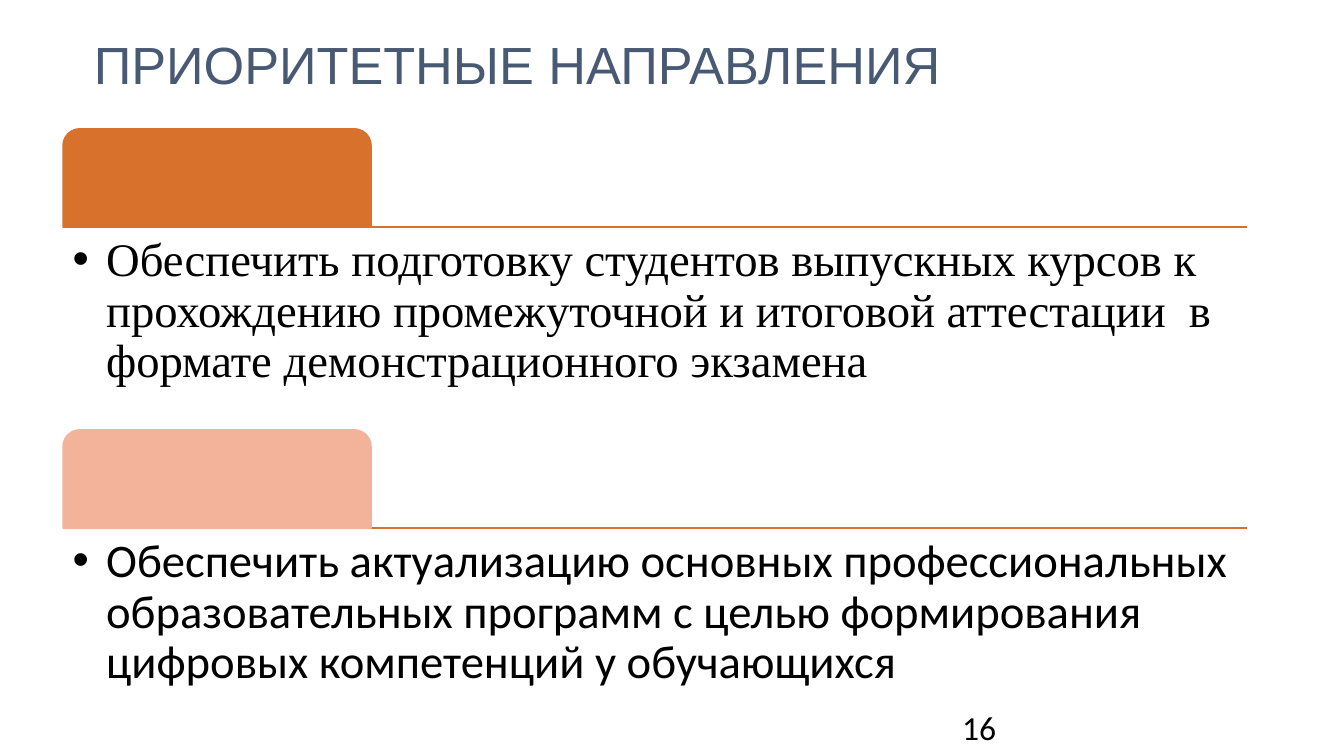
from lxml import etree
from pptx import Presentation
from pptx.dml.color import RGBColor
from pptx.enum import shapes, text
from pptx.oxml.ns import qn
from pptx.util import Inches, Pt

ORANGE = RGBColor(0xD7, 0x71, 0x2C)
PEACH = RGBColor(0xF3, 0xB3, 0x9B)
SLATE = RGBColor(0x48, 0x5A, 0x73)
BLACK = RGBColor(0, 0, 0)

LEFT, WIDTH = 0.47, 8.81
TAB_WIDTH, TAB_HEIGHT = 2.29, 0.73
FIRST_TOP, STEP = 0.96, 2.24

# Widescreen 16:9 slide
deck = Presentation()
deck.slide_width = Inches(10)
deck.slide_height = Inches(10 * 9 / 16)
slide = deck.slides.add_slide(deck.slide_layouts[6])


def add_text(words, box, font, inset=(0.1, 0.05), bullet=False):
    """Add a one-paragraph text box, bulleted on request."""
    frame = slide.shapes.add_textbox(*map(Inches, box)).text_frame
    side, edge = map(Inches, inset)
    frame_format = {
        "word_wrap": True,
        "vertical_anchor": text.MSO_ANCHOR.TOP,
        "margin_left": side, "margin_right": side,
        "margin_top": edge, "margin_bottom": edge,
    }
    for name, value in frame_format.items():
        setattr(frame, name, value)
    paragraph = frame.paragraphs[0]
    if bullet:
        paragraph.line_spacing = 0.9
        indent = Inches(0.25)
        properties = paragraph._p.get_or_add_pPr()
        properties.set("marL", str(indent))
        properties.set("indent", str(-indent))
        etree.SubElement(properties, qn("a:buFont")).set("typeface", "Arial")
        etree.SubElement(properties, qn("a:buChar")).set("char", "•")
    run = paragraph.add_run()
    run.text = words
    size, typeface, colour = font
    for name, value in {"size": Pt(size), "name": typeface}.items():
        setattr(run.font, name, value)
    run.font.color.rgb = colour


# Page number and title
add_text("16", (7.06, 5.21, 2.25, 0.3), (18, "Calibri", BLACK))
add_text("ПРИОРИТЕТНЫЕ НАПРАВЛЕНИЯ", (0.6, 0.19, 7.25, 0.57), (28, "Arial", SLATE))

# Priorities: a rule, a tab standing on it and the text below
priorities = [
    (ORANGE, "Times New Roman",
     "Обеспечить подготовку студентов выпускных курсов к прохождению "
     "промежуточной и итоговой аттестации  в формате демонстрационного экзамена"),
    (PEACH, "Calibri",
     "Обеспечить актуализацию основных профессиональных образовательных "
     "программ с целью формирования цифровых компетенций у обучающихся"),
]
for index, (tab_colour, typeface, priority) in enumerate(priorities):
    top = FIRST_TOP + index * STEP
    base = top + TAB_HEIGHT

    rule = slide.shapes.add_connector(
        shapes.MSO_CONNECTOR.STRAIGHT,
        Inches(LEFT), Inches(base), Inches(LEFT + WIDTH), Inches(base))
    rule.line.color.rgb = ORANGE
    rule.line.width = Pt(1)
    etree.SubElement(rule._element.spPr, qn("a:effectLst"))

    tab = slide.shapes.add_shape(
        shapes.MSO_SHAPE.ROUND_2_SAME_RECTANGLE,
        Inches(LEFT), Inches(top), Inches(TAB_WIDTH), Inches(TAB_HEIGHT))
    tab.adjustments[0] = 0.17
    tab.shadow.inherit = False
    tab.fill.solid()
    tab.fill.fore_color.rgb = tab_colour
    tab.line.color.rgb = tab_colour
    tab.line.width = Pt(1)

    add_text(priority, (LEFT, base, WIDTH, 1.47), (25, typeface, BLACK),
             inset=(0.07, 0.07), bullet=True)

deck.save("out.pptx")
